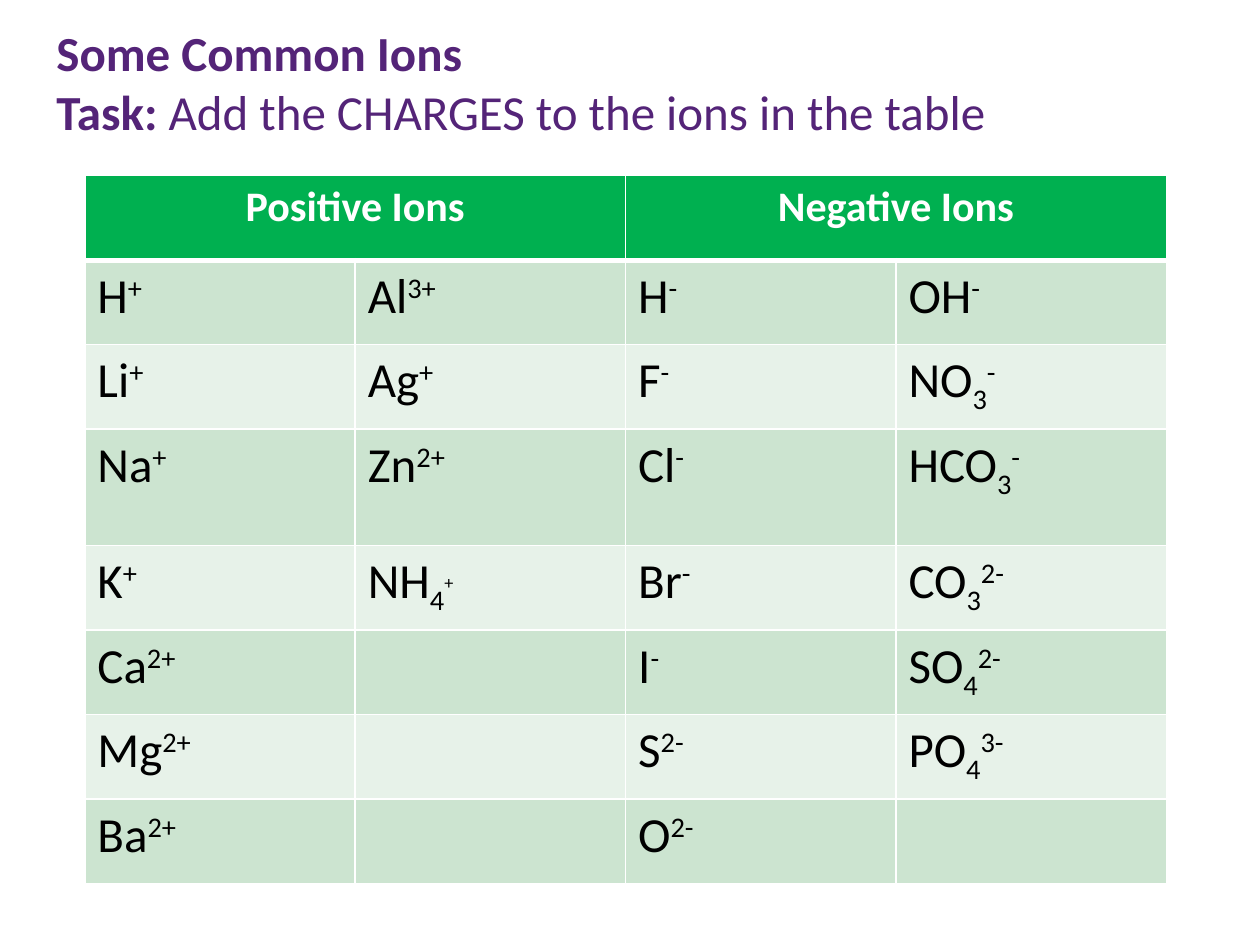
from lxml import etree
from pptx import Presentation
from pptx import util as u
from pptx.dml.color import RGBColor
from pptx.enum import text
from pptx.oxml.ns import qn

Pt = u.Pt
PURPLE = RGBColor(0x54, 0x24, 0x78)
GREEN = RGBColor(0x00, 0xB0, 0x50)
BANDS = [RGBColor(0xCC, 0xE4, 0xD0), RGBColor(0xE7, 0xF2, 0xE9)]
WHITE = RGBColor(0xFF, 0xFF, 0xFF)
BLACK = RGBColor(0x00, 0x00, 0x00)
SUPER, SUB = 30000, -25000
ROW_HEIGHT, TALL_ROW = 48.3, 66.6

IONS = [
    ["H +", "Al 3+", "H -", "OH -"],
    ["Li +", "Ag +", "F -", "NO 3 -"],
    ["Na +", "Zn 2+", "Cl -", "HCO 3 -"],
    ["K +", "NH 4 +", "Br -", "CO 3 2-"],
    ["Ca 2+", "", "I -", "SO 4 2-"],
    ["Mg 2+", "", "S 2-", "PO 4 3-"],
    ["Ba 2+", "", "O 2-", ""],
]


def add_run(paragraph, words, color, baseline=0, **formats):
    run = paragraph.add_run()
    run.text = words
    for key, value in {"name": "Calibri", "size": Pt(28), "bold": False, **formats}.items():
        setattr(run.font, key, value)
    run.font.color.rgb = color
    if baseline:
        run.font._element.set("baseline", str(baseline))


def style_cell(cell, color, top, bottom):
    cell.fill.solid()
    cell.fill.fore_color.rgb = color
    properties = cell._tc.get_or_add_tcPr()
    for place, (side, width) in enumerate({"L": 1, "R": 1, "T": top, "B": bottom}.items()):
        line = etree.Element(qn(f"a:ln{side}"), w=str(Pt(width)))
        fill = etree.SubElement(line, qn("a:solidFill"))
        etree.SubElement(fill, qn("a:srgbClr"), val=str(WHITE))
        properties.insert(place, line)


prs = Presentation()
prs.slide_width, prs.slide_height = Pt(720), Pt(540)
slide = prs.slides.add_slide(prs.slide_layouts[6])

ions = slide.shapes.add_table(8, 4, Pt(48.5), Pt(100.4), Pt(618), Pt(7 * ROW_HEIGHT + TALL_ROW)).table
for column in ions.columns:
    column.width = Pt(154.5)
for number, row in enumerate(ions.rows):
    row.height = Pt(TALL_ROW if number == 3 else ROW_HEIGHT)

for column in range(4):
    style_cell(ions.cell(0, column), GREEN, 1, 3)
for column, heading in ((0, "Positive Ions"), (2, "Negative Ions")):
    header = ions.cell(0, column)
    header.merge(ions.cell(0, column + 1))
    paragraph = header.text_frame.paragraphs[0]
    paragraph.alignment = text.PP_ALIGN.CENTER
    add_run(paragraph, heading, WHITE, size=Pt(24), bold=True)

for number, formulas in enumerate(IONS, 1):
    for column, formula in enumerate(formulas):
        cell = ions.cell(number, column)
        style_cell(cell, BANDS[(number - 1) % 2], 3 if number == 1 else 1, 1)
        parts = formula.split()
        baselines = [0, SUB, SUPER] if len(parts) == 3 else [0, SUPER]
        for part, baseline in zip(parts, baselines):
            small = formula == "NH 4 +" and baseline == SUPER
            add_run(cell.text_frame.paragraphs[0], part, BLACK, baseline, size=Pt(18 if small else 28))

title = slide.shapes.add_textbox(Pt(25.2), Pt(9.4), Pt(657.4), Pt(75)).text_frame
title.word_wrap = True
title.auto_size = text.MSO_AUTO_SIZE.SHAPE_TO_FIT_TEXT
add_run(title.paragraphs[0], "Some Common Ions", PURPLE, bold=True)
task = title.add_paragraph()
add_run(task, "Task: ", PURPLE, bold=True)
add_run(task, "Add the CHARGES to the ions in the table", PURPLE)

prs.save("out.pptx")
